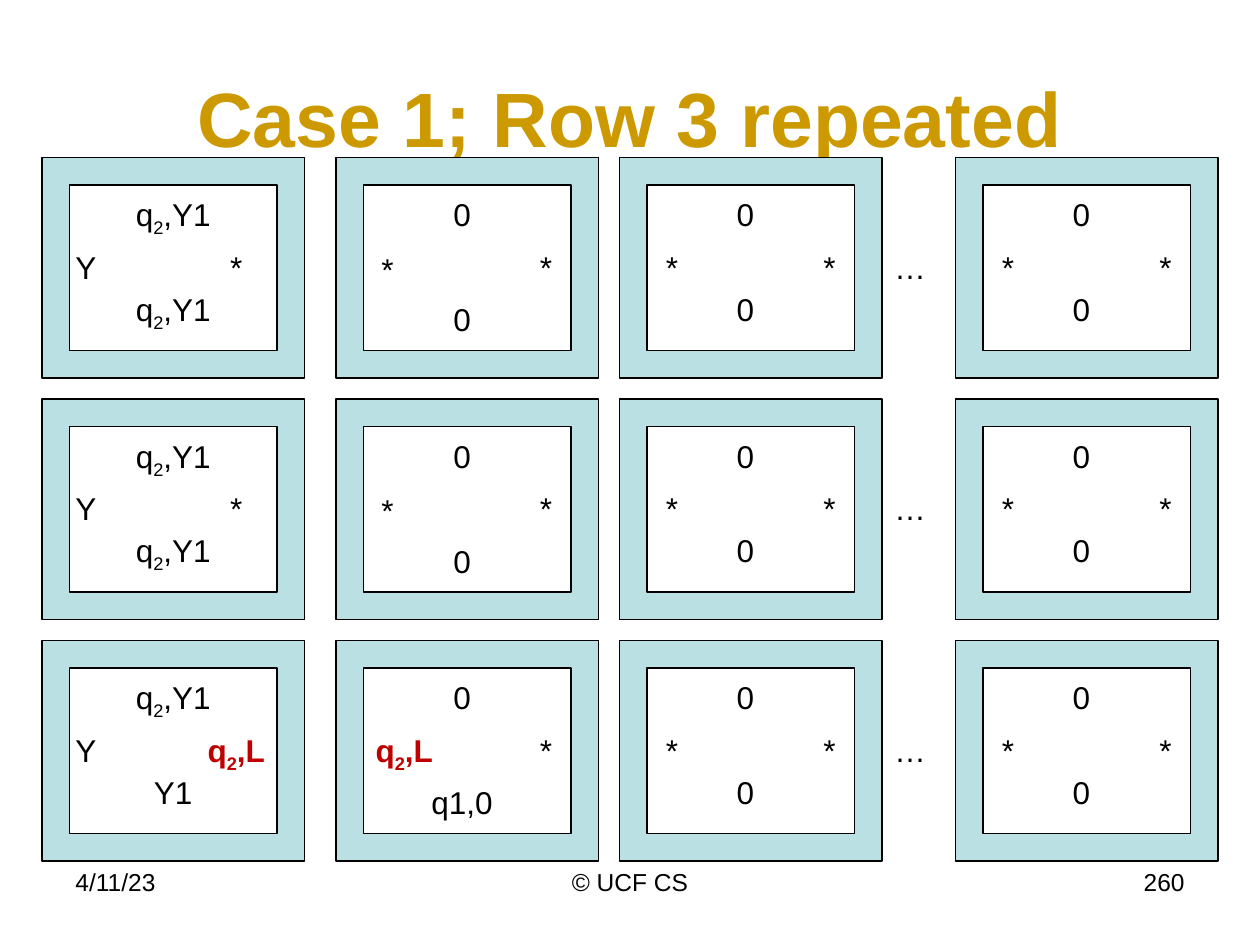
from pptx import Presentation
from pptx.dml.color import RGBColor
from pptx.enum.shapes import MSO_SHAPE
from pptx.enum.text import MSO_ANCHOR, MSO_AUTO_SIZE, PP_ALIGN
from pptx.util import Pt

BLACK, RED, GOLD, PALE_BLUE = "000000", "C00000", "CC9900", "BBE0E3"
STATE, MOVE = "q_2,Y1", "q_2,L"
CELL_LEFTS = (24, 192, 354, 546)
FIRST_ROW_TOP, ROW_PITCH = 90, 138
CELL_WIDTH, CELL_HEIGHT = 150, 126
ELLIPSIS_LEFT, MIDDLE = 504, 48

# Each slot is (left, top, width) within a cell: top, left, right, bottom.
FIRST_SLOTS = ((18, 18, 114), (12, MIDDLE, 66), (78, MIDDLE, 66), (18, 72, 114))
SECOND_SLOTS = ((30, 18, 84), (-3.6, 49.2, 66), (102, MIDDLE, 36), (30, 78, 84))
OTHER_SLOTS = ((54, 18, 36), (12, MIDDLE, 36), (102, MIDDLE, 36), (54, 72, 36))
MOVE_SLOT = (6, MIDDLE, 66)
COLUMN_SLOTS = (FIRST_SLOTS, SECOND_SLOTS, OTHER_SLOTS, OTHER_SLOTS)

BLANK_CELL = ("0", "*", "*", "0")
REPEATED_ROW = ((STATE, "Y", "*", STATE), BLANK_CELL, BLANK_CELL, BLANK_CELL)
MOVING_ROW = ((STATE, "Y", MOVE, "Y1"), ("0", MOVE, "*", "q1,0"), BLANK_CELL, BLANK_CELL)
ROWS = (REPEATED_ROW, REPEATED_ROW, MOVING_ROW)


def rgb(value):
    """Turn a hex string into a colour."""
    return RGBColor.from_string(value)


def style(paragraph, size, color=BLACK, bold=False, align=PP_ALIGN.CENTER):
    """Set the font and alignment of a whole paragraph."""
    paragraph.alignment = align
    paragraph.font.name = "Arial"
    paragraph.font.size = Pt(size)
    paragraph.font.bold = bold
    paragraph.font.color.rgb = rgb(color)


def write(paragraph, text):
    """Write text in which an underscore lowers the next character."""
    stem, _, rest = text.partition("_")
    paragraph.add_run().text = stem
    if rest:
        subscript = paragraph.add_run()
        subscript.text = rest[0]
        subscript._r.get_or_add_rPr().set("baseline", "-25000")
        paragraph.add_run().text = rest[1:]


def add_title(slide, text):
    """Fill and place the title placeholder."""
    title = slide.shapes.title
    title.left, title.top, title.width, title.height = Pt(36), Pt(21.6), Pt(648), Pt(90)
    frame = title.text_frame
    frame.text = text
    frame.auto_size = MSO_AUTO_SIZE.NONE
    frame.vertical_anchor = MSO_ANCHOR.MIDDLE
    style(frame.paragraphs[0], 44, GOLD, True)


def add_footer(slide, text, left, width, align):
    """Add one part of the footer line."""
    footer = slide.shapes.add_textbox(Pt(left), Pt(492), Pt(width), Pt(37.5))
    footer.text_frame.word_wrap = True
    paragraph = footer.text_frame.paragraphs[0]
    write(paragraph, text)
    style(paragraph, 14, align=align)


def add_label(slide, text, left, top, width, align=PP_ALIGN.CENTER):
    """Add a tile label, with machine moves in bold red."""
    height = 29 if "_" in text else 36
    label = slide.shapes.add_textbox(Pt(left), Pt(top), Pt(width), Pt(height))
    label.text_frame.word_wrap = True
    label.text_frame.auto_size = MSO_AUTO_SIZE.SHAPE_TO_FIT_TEXT
    paragraph = label.text_frame.paragraphs[0]
    write(paragraph, text)
    is_move = text == MOVE
    style(paragraph, 18, RED if is_move else BLACK, is_move, align)


def add_cell(slide, left, top, labels, slots):
    """Add a framed tile with its four edge labels."""
    tile = slide.shapes.add_shape(
        MSO_SHAPE.FRAME, Pt(left), Pt(top), Pt(CELL_WIDTH), Pt(CELL_HEIGHT))
    tile.shadow.inherit = False
    tile.fill.solid()
    tile.fill.fore_color.rgb = rgb(PALE_BLUE)
    tile.line.color.rgb = rgb(BLACK)
    tile.line.width = Pt(0.75)
    for text, (dx, dy, width) in zip(labels, slots):
        align = PP_ALIGN.LEFT if text == "Y" else PP_ALIGN.CENTER
        add_label(slide, text, left + dx, top + dy, width, align)


def add_row(slide, top, cells):
    """Add a row of tiles with an ellipsis before the last."""
    for left, labels, slots in zip(CELL_LEFTS, cells, COLUMN_SLOTS):
        if labels[1] == MOVE:
            slots = (slots[0], MOVE_SLOT, *slots[2:])
        add_cell(slide, left, top, labels, slots)
    add_label(slide, "…", ELLIPSIS_LEFT, top + MIDDLE, 66, PP_ALIGN.LEFT)


def main():
    """Build the slide and save it."""
    presentation = Presentation()
    presentation.slide_width, presentation.slide_height = Pt(720), Pt(540)
    slide = presentation.slides.add_slide(presentation.slide_layouts[5])
    add_title(slide, "Case 1; Row 3 repeated")
    add_footer(slide, "4/11/23", 36, 168, PP_ALIGN.LEFT)
    add_footer(slide, "© UCF CS", 246, 228, PP_ALIGN.CENTER)
    add_footer(slide, "260", 516, 168, PP_ALIGN.RIGHT)
    for index, cells in enumerate(ROWS):
        add_row(slide, FIRST_ROW_TOP + index * ROW_PITCH, cells)
    presentation.save("out.pptx")


if __name__ == "__main__":
    main()
